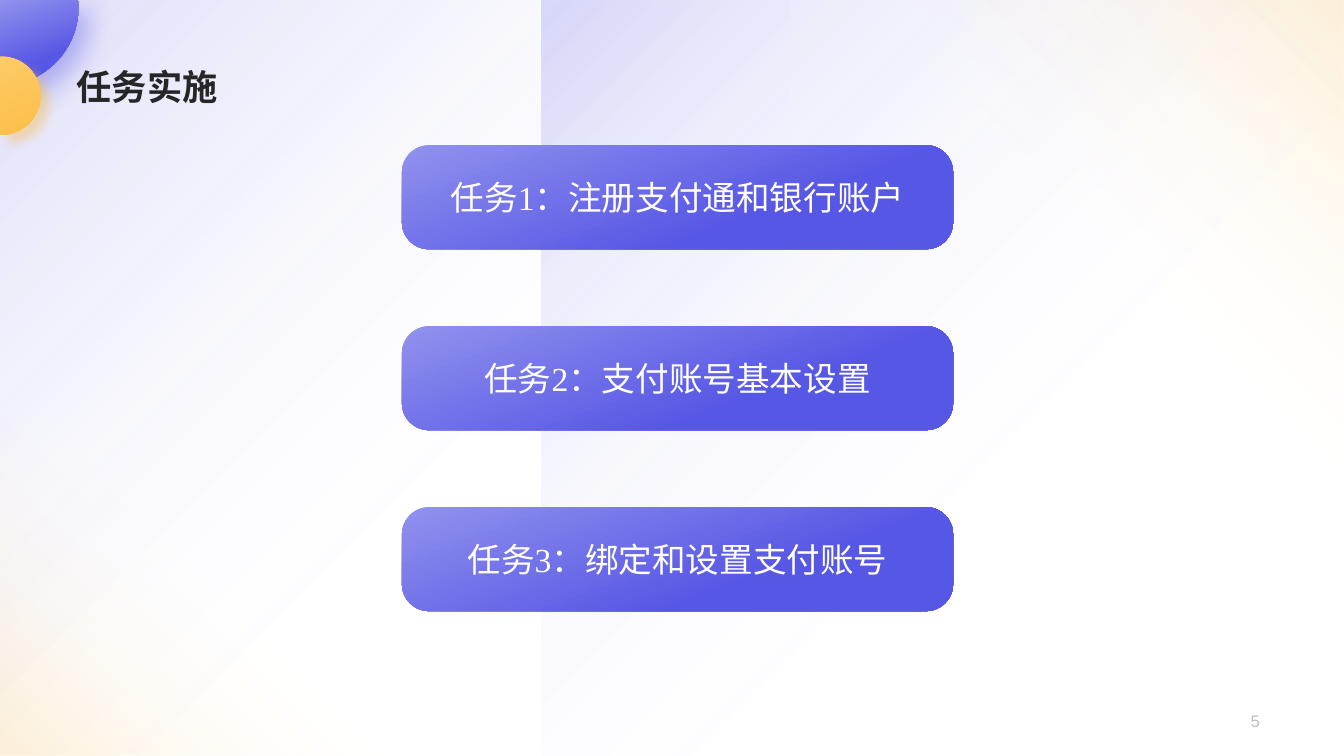
"""Build the task overview slide with three gradient cards."""
import math

import lxml.etree
import pptx
import pptx.dml.color
import pptx.enum.shapes
import pptx.enum.text
import pptx.oxml.ns
import pptx.util
from pptx.util import Cm

COLORS = {
    "violet": "5757E5",
    "lilac": "9191EE",
    "amber": "FCBE49",
    "honey": "FDCB67",
    "white": "FFFFFF",
    "ink": "262626",
    "grey": "BFBFBF",
}
TASKS = ["任务1：注册支付通和银行账户", "任务2：支付账号基本设置", "任务3：绑定和设置支付账号"]
WASH = [(0, "violet", 20), (65, "white", 0)]
GLOW = [(45, "white", 0), (98, "amber", 20)]
CARD = [(0, "lilac", 100), (66, "violet", 100)]
HONEY = [(0, "honey", 100), (100, "amber", 100)]


def add_element(parent, tag, **attributes):
    """Append a drawing element with the given attributes."""
    element = lxml.etree.SubElement(parent, pptx.oxml.ns.qn(tag))
    for name, value in attributes.items():
        element.set(name, str(value))
    return element


def add_color(parent, name, alpha):
    """Append a colour with its opacity in percent."""
    color = add_element(parent, "a:srgbClr", val=COLORS[name])
    if alpha < 100:
        add_element(color, "a:alpha", val=alpha * 1000)


def paint(shape, stops, angle=None):
    """Give a shape a linear gradient, or a corner one without an angle."""
    shape.shadow.inherit = False
    shape.line.fill.background()
    properties = shape.element.spPr
    gradient = add_element(properties, "a:gradFill", rotWithShape=1)
    stop_list = add_element(gradient, "a:gsLst")
    for position, name, alpha in stops:
        add_color(add_element(stop_list, "a:gs", pos=position * 1000), name, alpha)
    if angle is None:
        circle = add_element(gradient, "a:path", path="circle")
        add_element(circle, "a:fillToRect", r=100000, b=100000)
    else:
        add_element(gradient, "a:lin", ang=angle * 60000, scaled=0)
    properties.find(pptx.oxml.ns.qn("a:ln")).addprevious(gradient)


def add_panel(slide, box, stops, angle=None, flipped=False):
    """Add a translucent background rectangle."""
    kind = pptx.enum.shapes.MSO_SHAPE.RECTANGLE
    shape = slide.shapes.add_shape(kind, *map(Cm, box))
    paint(shape, stops, angle)
    if flipped:
        shape.element.spPr.xfrm.set("flipH", "1")
        shape.element.spPr.xfrm.set("flipV", "1")


def add_disc(slide, center, radius, start, stops, shadow):
    """Add a disc cut off by the slide edge, with a coloured shadow."""
    center_x, center_y = center
    angles = [math.radians(start + (90 - start) * step / 60) for step in range(61)]
    arc = [(center_x + radius * math.cos(a), center_y + radius * math.sin(a)) for a in angles]
    points = [(0, max(0, center_y - radius)), *arc, (0, center_y + radius)]
    points = [(Cm(x), Cm(y)) for x, y in points]
    builder = slide.shapes.build_freeform(*points[0], scale=1.0)
    builder.add_line_segments(points[1:], close=True)
    shape = builder.convert_to_shape()
    paint(shape, stops, 70)
    color, blur, distance = shadow
    effects = shape.element.spPr.find(pptx.oxml.ns.qn("a:effectLst"))
    outer = add_element(effects, "a:outerShdw", blurRad=pptx.util.Pt(blur),
                        dist=pptx.util.Pt(distance), dir=45 * 60000, algn="tl", rotWithShape=0)
    add_color(outer, color, 40)


def write(shape, text, font, size, color, alignment, bold=False):
    """Put one formatted line of text in a shape."""
    frame = shape.text_frame
    frame.text = text
    frame.word_wrap = True
    paragraph = frame.paragraphs[0]
    paragraph.alignment = alignment
    run_font = paragraph.runs[0].font
    run_font.name = font
    run_font.size = pptx.util.Pt(size)
    run_font.bold = bold
    run_font.color.rgb = pptx.dml.color.RGBColor.from_string(COLORS[color])
    return frame


def add_card(slide, top, text):
    """Add a rounded task card."""
    kind = pptx.enum.shapes.MSO_SHAPE.ROUNDED_RECTANGLE
    shape = slide.shapes.add_shape(kind, Cm(10.13), Cm(top), Cm(13.89), Cm(2.62))
    shape.adjustments[0] = 0.26
    paint(shape, CARD, 70)
    frame = write(shape, text, "Times New Roman", 24, "white", pptx.enum.text.PP_ALIGN.CENTER)
    frame.vertical_anchor = pptx.enum.text.MSO_ANCHOR.MIDDLE


def main():
    """Build and save the slide."""
    presentation = pptx.Presentation()
    presentation.slide_width = Cm(33.87)
    presentation.slide_height = Cm(19.05)
    slide = presentation.slides.add_slide(presentation.slide_layouts[6])

    add_panel(slide, (0, 0, 19.91, 19.05), WASH)
    add_panel(slide, (22.1, 0, 11.77, 12.29), GLOW, 315)
    add_panel(slide, (-0.05, 9.91, 10.19, 9.14), GLOW, 315, flipped=True)
    add_panel(slide, (13.64, 0, 20.23, 19.05), WASH, flipped=True)
    add_disc(slide, (0, 0.18), 1.98, -5.2, [(0, "lilac", 100), (67, "violet", 100)],
             ("violet", 19, 11))
    add_disc(slide, (0.03, 2.41), 0.99, -90, HONEY, ("amber", 7, 8))

    title = slide.shapes.add_textbox(Cm(1.83), Cm(1.63), Cm(15.09), Cm(1.4))
    frame = write(title, "任务实施", "Arial", 25.2, "ink", pptx.enum.text.PP_ALIGN.LEFT, bold=True)
    frame.margin_left = Cm(0.1)
    frame.paragraphs[0].line_spacing = 0.9

    number = slide.shapes.add_textbox(Cm(24.38), Cm(17.65), Cm(7.62), Cm(1.02))
    frame = write(number, "5", "Arial", 12, "grey", pptx.enum.text.PP_ALIGN.RIGHT)
    frame.vertical_anchor = pptx.enum.text.MSO_ANCHOR.MIDDLE

    for index, task in enumerate(TASKS):
        add_card(slide, 3.66 + 4.56 * index, task)

    presentation.save("out.pptx")


if __name__ == "__main__":
    main()
